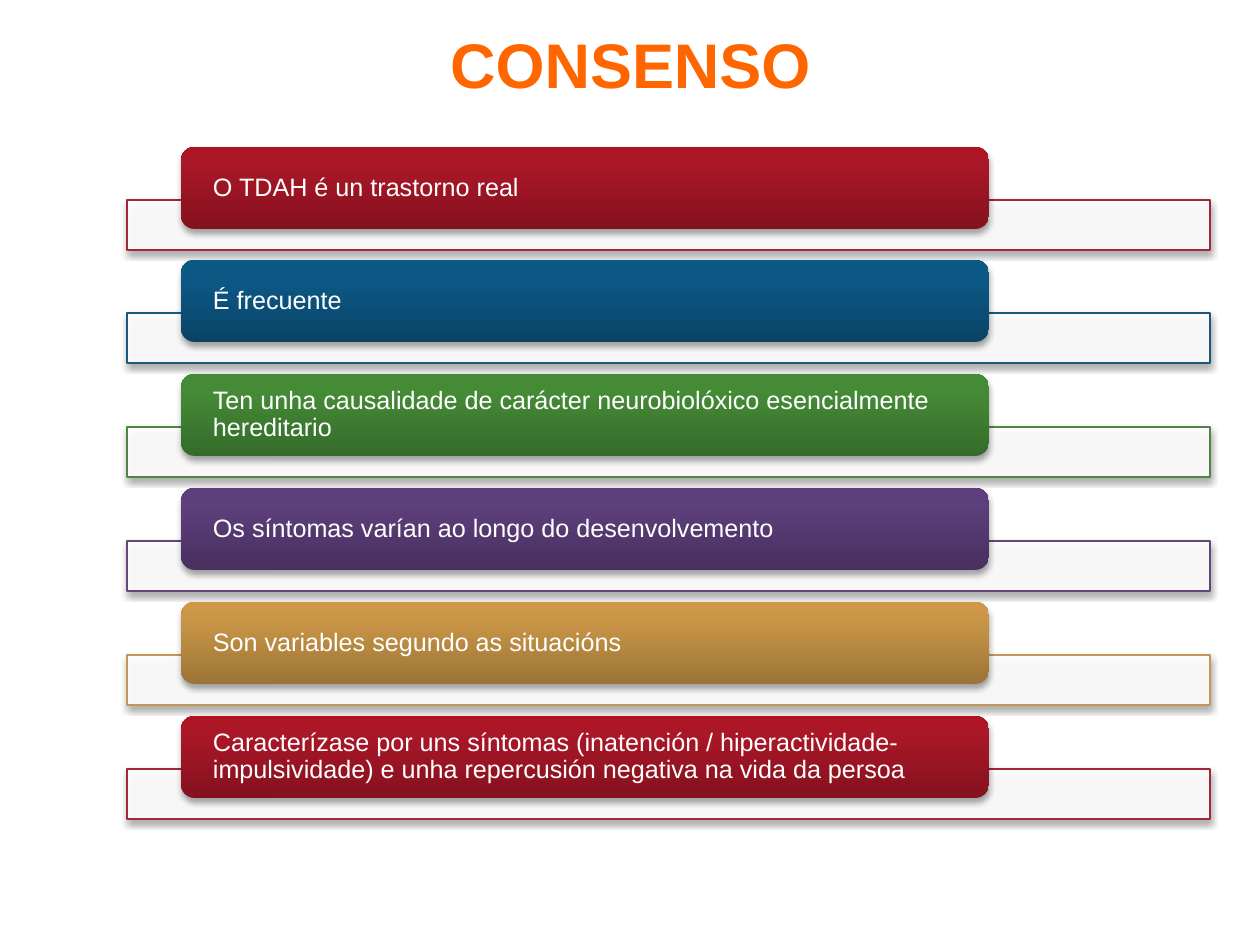
"""Build the CONSENSO slide: six statement cards, each over an outlined bar."""
from dataclasses import dataclass
from typing import Any

from lxml.etree import SubElement
from pptx import Presentation
from pptx.dml.color import RGBColor
from pptx.enum.shapes import MSO_SHAPE
from pptx.enum.text import MSO_ANCHOR, PP_ALIGN
from pptx.oxml.ns import qn
from pptx.util import Emu, Pt

EMU_PER_PX = 6048


@dataclass(frozen=True)
class Palette:
    outline: str
    bottom: str
    middle: str
    top: str


@dataclass(frozen=True)
class Theme:
    font: str = "Arial"
    title_size: int = 30
    statement_size: int = 12
    title_color: str = "FF6600"
    white: str = "FFFFFF"
    shadow_color: str = "000000"
    red: Palette = Palette("9F2936", "84111E", "AB1727", "AF1425")
    blue: Palette = Palette("1B587C", "094467", "0C5986", "0A5A89")
    green: Palette = Palette("4E8542", "356B2A", "458B36", "458D35")
    purple: Palette = Palette("604878", "48305F", "5D3F7B", "5D3E7D")
    gold: Palette = Palette("C19859", "9C7437", "CA9647", "CE9845")


@dataclass(frozen=True)
class Box:
    left: int
    top: int
    width: int
    height: int

    def emu(self) -> list[Emu]:
        return [px(n) for n in (self.left, self.top, self.width, self.height)]


@dataclass(frozen=True)
class Statement:
    text: str
    palette: Palette


THEME = Theme()
TITLE_BOX = Box(366, 24, 529, 79)
FIRST_CARD = Box(181, 147, 808, 82)
FIRST_BAR = Box(127, 200, 1083, 50)
LAST_ROW_OFFSET = 569
STATEMENTS = [
    Statement("O TDAH é un trastorno real", THEME.red),
    Statement("É frecuente", THEME.blue),
    Statement("Ten unha causalidade de carácter neurobiolóxico esencialmente hereditario", THEME.green),
    Statement("Os síntomas varían ao longo do desenvolvemento", THEME.purple),
    Statement("Son variables segundo as situacións", THEME.gold),
    Statement(
        "Caracterízase por uns síntomas (inatención / hiperactividade-impulsividade) "
        "e unha repercusión negativa na vida da persoa",
        THEME.red,
    ),
]


def px(length: int) -> Emu:
    return Emu(length * EMU_PER_PX)


def apply(target: Any, values: dict[str, Any]) -> None:
    for name, value in values.items():
        setattr(target, name, value)


def write(shape: Any, text: str, size: int, color: str, bold: bool,
          paragraph_format: dict[str, Any], inset: int) -> None:
    frame = shape.text_frame
    apply(frame, {
        "word_wrap": True, "vertical_anchor": MSO_ANCHOR.MIDDLE,
        "margin_left": px(inset), "margin_right": px(inset),
        "margin_top": 0, "margin_bottom": 0,
    })
    paragraph = frame.paragraphs[0]
    apply(paragraph, paragraph_format)
    run = paragraph.add_run()
    run.text = text
    apply(run.font, {"name": THEME.font, "size": Pt(size), "bold": bold})
    run.font.color.rgb = RGBColor.from_string(color)


def add_color(parent: Any, color: str, alpha: int) -> None:
    value = SubElement(parent, qn("a:srgbClr"), val=color)
    SubElement(value, qn("a:alpha"), val=str(alpha * 1000))


def add_shadow(shape: Any) -> None:
    shape.shadow.inherit = False
    effects = shape.element.spPr.find(qn("a:effectLst"))
    shadow = SubElement(effects, qn("a:outerShdw"), blurRad=str(Pt(3.1)), dist=str(Pt(1.8)),
                        dir="5400000", rotWithShape="0")
    add_color(shadow, THEME.shadow_color, 35)


def add_bar(slide: Any, box: Box, palette: Palette) -> None:
    bar = slide.shapes.add_shape(MSO_SHAPE.RECTANGLE, *box.emu())
    bar.fill.solid()
    bar.fill.fore_color.rgb = RGBColor.from_string(THEME.white)
    fill_color = bar.element.spPr.find(qn("a:solidFill")).find(qn("a:srgbClr"))
    SubElement(fill_color, qn("a:alpha"), val="90000")
    bar.line.color.rgb = RGBColor.from_string(palette.outline)
    bar.line.width = Pt(0.75)
    add_shadow(bar)


def add_card(slide: Any, box: Box, statement: Statement) -> None:
    card = slide.shapes.add_shape(MSO_SHAPE.ROUNDED_RECTANGLE, *box.emu())
    card.fill.gradient()
    card.fill.gradient_angle = 90
    stops = card.element.spPr.find(qn("a:gradFill")).find(qn("a:gsLst"))
    stops.clear()
    palette = statement.palette
    for position, color in ((0, palette.bottom), (80, palette.middle), (100, palette.top)):
        stop = SubElement(stops, qn("a:gs"), pos=str(position * 1000))
        SubElement(stop, qn("a:srgbClr"), val=color)
    card.line.fill.background()
    add_shadow(card)
    write(card, statement.text, THEME.statement_size, THEME.white, False,
          {"alignment": PP_ALIGN.LEFT, "line_spacing": 0.9}, inset=28)


def shifted(box: Box, offset: int) -> Box:
    return Box(box.left, box.top + offset, box.width, box.height)


def main() -> None:
    presentation = Presentation()
    apply(presentation, {"slide_width": px(1260), "slide_height": px(945)})
    slide = presentation.slides.add_slide(presentation.slide_layouts[6])
    title = slide.shapes.add_textbox(*TITLE_BOX.emu())
    write(title, "CONSENSO", THEME.title_size, THEME.title_color, True,
          {"alignment": PP_ALIGN.CENTER}, inset=0)
    for index, statement in enumerate(STATEMENTS):
        offset = LAST_ROW_OFFSET * index // (len(STATEMENTS) - 1)
        add_bar(slide, shifted(FIRST_BAR, offset), statement.palette)
        add_card(slide, shifted(FIRST_CARD, offset), statement)
    presentation.save("out.pptx")


if __name__ == "__main__":
    main()
